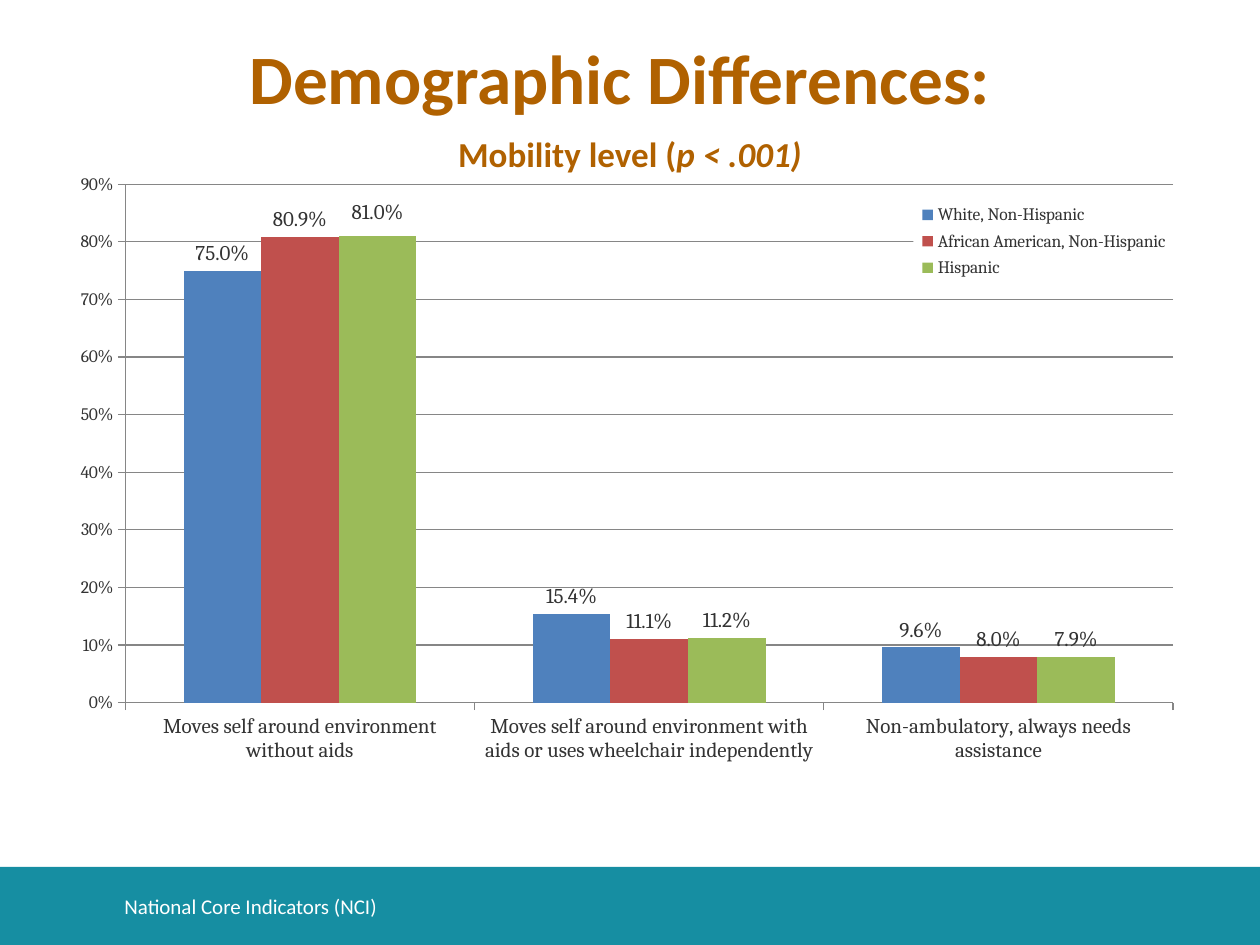
from lxml.etree import SubElement
from pptx import Presentation
from pptx.chart.data import CategoryChartData
from pptx.dml.color import RGBColor
from pptx.enum.chart import XL_CHART_TYPE, XL_LABEL_POSITION, XL_LEGEND_POSITION, XL_TICK_MARK
from pptx.enum.shapes import MSO_SHAPE
from pptx.enum.text import MSO_ANCHOR, PP_ALIGN
from pptx.oxml.ns import qn
from pptx.util import Emu, Pt

WHITE = RGBColor(0xFF, 0xFF, 0xFF)
TEAL = RGBColor(0x16, 0x8E, 0xA2)
BROWN = RGBColor(0xB0, 0x61, 0x00)
DARK = RGBColor(0x33, 0x33, 0x33)
GRAY = RGBColor(0x86, 0x86, 0x86)
BLUE = RGBColor(0x4F, 0x81, 0xBD)
RED = RGBColor(0xC0, 0x50, 0x4D)
GREEN = RGBColor(0x9B, 0xBB, 0x59)

CATEGORIES = [
    "Moves self around environment without aids",
    "Moves self around environment with aids or uses wheelchair independently",
    "Non-ambulatory, always needs assistance",
]
SERIES = [
    ("White, Non-Hispanic", (0.75, 0.154, 0.096), BLUE),
    ("African American, Non-Hispanic", (0.809, 0.111, 0.08), RED),
    ("Hispanic", (0.81, 0.112, 0.079), GREEN),
]


def px(n):
    return Emu(round(n * 914400 / 126))


def manual_layout(parent, index, target=None, **fractions):
    layout = SubElement(parent, qn("c:layout"))
    parent.insert(index, layout)
    manual = SubElement(layout, qn("c:manualLayout"))
    if target:
        SubElement(manual, qn("c:layoutTarget")).set("val", target)
    if "w" in fractions:
        for mode in ("xMode", "yMode"):
            SubElement(manual, qn(f"c:{mode}")).set("val", "edge")
    for name, value in fractions.items():
        SubElement(manual, qn(f"c:{name}")).set("val", str(value))


class SlideBuilder:
    """Holds the text and chart style and the current slide."""

    text_font = "Calibri"
    chart_font = "Cambria"
    label_format = "0.0%"

    def __init__(self, prs):
        self.s = prs.slides.add_slide(prs.slide_layouts[5])

    def band(self, x, y, w, h, color):
        sp = self.s.shapes.add_shape(MSO_SHAPE.RECTANGLE, px(x), px(y), px(w), px(h))
        sp.shadow.inherit = False
        sp.fill.solid()
        sp.fill.fore_color.rgb = color
        sp.line.fill.background()

    def set_runs(self, sp, runs, size, color, bold, align, spacing=None):
        tf = sp.text_frame
        tf.word_wrap = True
        tf.vertical_anchor = MSO_ANCHOR.MIDDLE
        p = tf.paragraphs[0]
        p.alignment = align
        p.line_spacing = spacing
        for text, italic in runs:
            r = p.add_run()
            r.text = text
            r.font.name = self.text_font
            r.font.size = Pt(size)
            r.font.bold = bold
            r.font.italic = italic
            r.font.color.rgb = color

    def title(self, x, y, w, h, runs, size, color):
        sp = self.s.shapes.title
        sp.left, sp.top, sp.width, sp.height = px(x), px(y), px(w), px(h)
        self.set_runs(sp, runs, size, color, True, PP_ALIGN.CENTER)

    def text(self, x, y, w, h, text, size, color, bold=False, align=PP_ALIGN.LEFT, spacing=None):
        sp = self.s.shapes.add_textbox(px(x), px(y), px(w), px(h))
        self.set_runs(sp, [(text, None)], size, color, bold, align, spacing)

    def axis(self, axis, size):
        axis.major_tick_mark = XL_TICK_MARK.OUTSIDE
        axis.minor_tick_mark = XL_TICK_MARK.NONE
        axis.format.line.color.rgb = GRAY
        axis.tick_labels.font.size = Pt(size)

    def labels(self, series):
        labels = series.data_labels
        labels.show_value = True
        labels.number_format = self.label_format
        labels.number_format_is_linked = False
        labels.position = XL_LABEL_POSITION.OUTSIDE_END
        labels.font.size = Pt(12)

    def raise_label(self, series, index, dy):
        label = series.points[index].data_label
        label.font.size = Pt(12)
        label.position = XL_LABEL_POSITION.OUTSIDE_END
        node = series.data_labels._element.find(qn("c:dLbl"))
        manual_layout(node, 1, x=0, y=dy)
        fmt = SubElement(node, qn("c:numFmt"))
        fmt.set("formatCode", self.label_format)
        fmt.set("sourceLinked", "0")
        node.insert(2, fmt)

    def legend(self, chart):
        chart.has_legend = True
        legend = chart.legend
        legend.position = XL_LEGEND_POSITION.RIGHT
        legend.include_in_layout = False
        legend.font.size = Pt(10)
        node = legend._element
        for old in node.findall(qn("c:layout")):
            node.remove(old)
        manual_layout(node, 1, x=0.75, y=0.05, w=0.23, h=0.13)
        sp_pr = SubElement(node, qn("c:spPr"))
        fill = SubElement(sp_pr, qn("a:solidFill"))
        SubElement(fill, qn("a:srgbClr")).set("val", str(WHITE))
        node.find(qn("c:txPr")).addprevious(sp_pr)

    def column_chart(self, x, y, w, h):
        data = CategoryChartData(number_format="0%")
        data.categories = CATEGORIES
        for name, values, _ in SERIES:
            data.add_series(name, values)
        frame = self.s.shapes.add_chart(
            XL_CHART_TYPE.COLUMN_CLUSTERED, px(x), px(y), px(w), px(h), data)
        chart = frame.chart
        chart.has_title = False
        chart.font.name = self.chart_font
        chart.font.size = Pt(10)
        chart.font.color.rgb = DARK
        self.axis(chart.category_axis, 12)
        value_axis = chart.value_axis
        self.axis(value_axis, 10)
        value_axis.minimum_scale, value_axis.maximum_scale = 0, 0.9
        value_axis.major_unit = 0.1
        value_axis.tick_labels.number_format = "0%"
        value_axis.tick_labels.number_format_is_linked = False
        value_axis.major_gridlines.format.line.color.rgb = GRAY
        plot = chart.plots[0]
        plot.vary_by_categories = False
        plot.gap_width, plot.overlap = 150, 0
        for series, (_, _, color) in zip(plot.series, SERIES):
            series.format.fill.solid()
            series.format.fill.fore_color.rgb = color
            self.labels(series)
        self.raise_label(plot.series[2], 0, -0.01)
        area = chart._chartSpace.chart.plotArea
        for old in area.findall(qn("c:layout")):
            area.remove(old)
        manual_layout(area, 0, "inner", x=0.055, y=0.029, w=0.924, h=0.781)
        self.legend(chart)


def main():
    prs = Presentation()
    prs.slide_width, prs.slide_height = px(1260), px(945)
    b = SlideBuilder(prs)
    b.band(0, 867, 1260, 78, TEAL)
    b.title(63, 112, 1134, 83, [("Mobility level (", None), ("p < .001)", True)], 20, BROWN)
    b.text(112, 881, 932, 50, "National Core Indicators (NCI)", 12, WHITE)
    b.column_chart(63, 165, 1134, 664)
    b.text(53, 38, 1134, 89, "Demographic Differences:", 39.6, BROWN, True, PP_ALIGN.CENTER, 0.9)
    prs.save("out.pptx")


if __name__ == "__main__":
    main()
